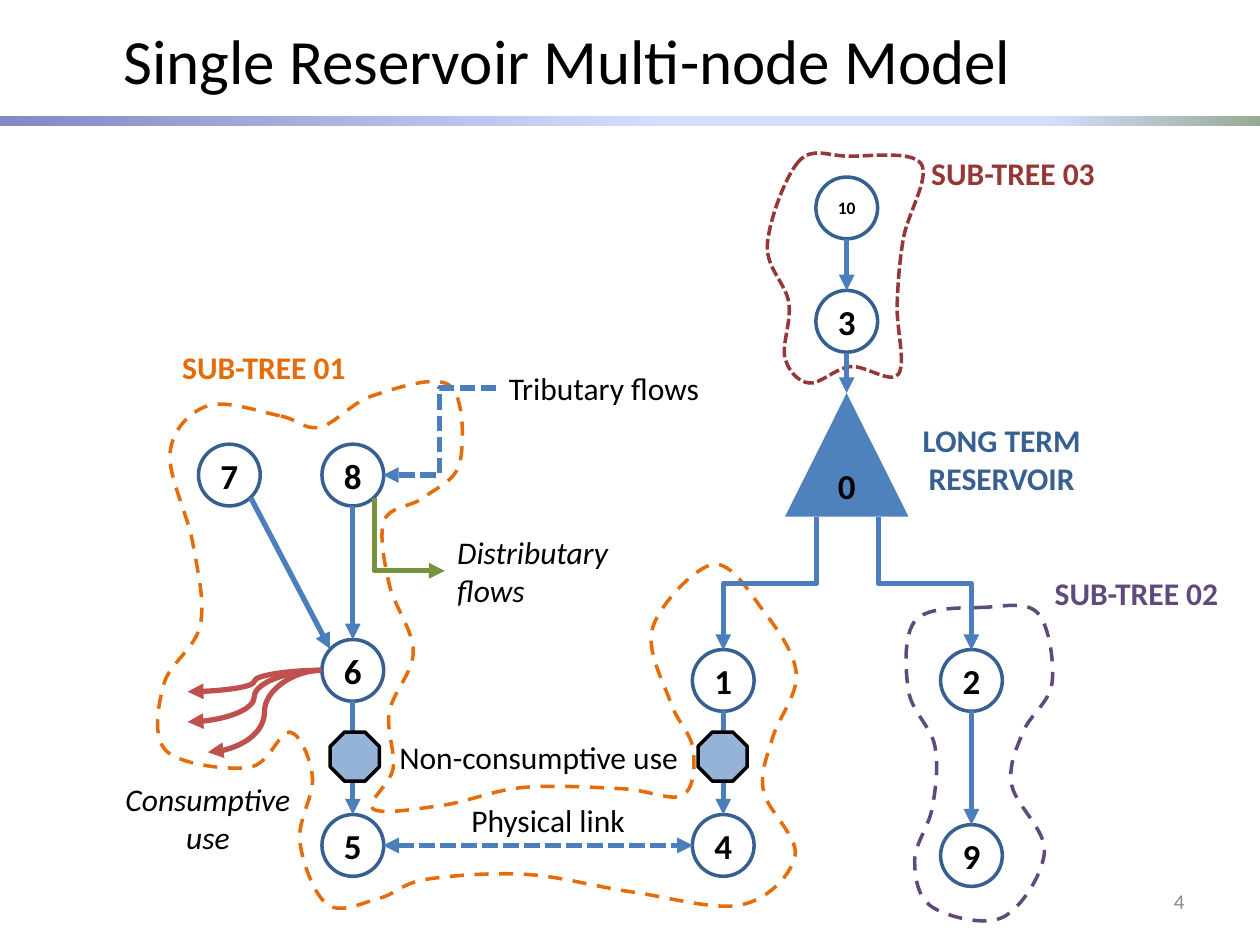
from copy import deepcopy
from dataclasses import dataclass

from lxml.etree import SubElement
from pptx import Presentation
from pptx.dml.color import RGBColor
from pptx.enum.dml import MSO_LINE
from pptx.enum.shapes import MSO_CONNECTOR, MSO_SHAPE
from pptx.enum.text import MSO_ANCHOR, PP_ALIGN
from pptx.oxml.ns import qn
from pptx.util import Inches, Pt


@dataclass(frozen=True)
class Theme:
    font: str = "Calibri"
    black: str = "000000"
    grey: str = "8C8C8C"
    blue: str = "4F81BD"
    link: str = "4B7EBC"
    navy: str = "376092"
    pale: str = "95B3D7"
    orange: str = "E46C0A"
    purple: str = "604A7B"
    maroon: str = "953735"
    green: str = "77933C"
    red: str = "C0504D"
    band: tuple = ((0, "8488C4"), (53, "D4DEFF"), (83, "D4DEFF"), (100, "96AB94"))
    title: int = 36
    node: int = 20
    label: int = 18
    number: int = 12
    small: int = 10
    outline: int = 2
    flow: int = 3


T = Theme()
D = 0.49      # node diameter
R = D / 2
OCT = 0.39    # octagon size

# Node centres
NODES = {
    "10": (6.72, 1.65), "3": (6.72, 2.55), "1": (5.74, 5.4), "4": (5.74, 6.71),
    "7": (1.82, 3.77), "8": (2.8, 3.77), "6": (2.8, 5.32), "5": (2.8, 6.71),
    "2": (7.71, 5.4), "9": (7.71, 6.79),
}

# Points that the sub-tree outlines pass through
TREE_1 = [
    (2.22, 3.3), (1.65, 3.22), (1.35, 3.59), (1.53, 4.31), (1.59, 4.96), (1.3, 5.43),
    (1.32, 5.96), (1.98, 6.09), (2.3, 5.81), (2.48, 6.17), (2.38, 6.68), (2.6, 7.18),
    (3.01, 7.13), (3.38, 6.98), (4.18, 6.94), (5.02, 7.08), (5.89, 7.18), (6.31, 6.79),
    (6.06, 6.28), (6.13, 5.86), (6.32, 5.35), (6.06, 4.85), (5.66, 4.48), (5.18, 4.98),
    (5.32, 5.57), (5.5, 5.94), (5.42, 6.31), (4.94, 6.26), (4.15, 6.25), (3.52, 6.39),
    (2.96, 6.42), (3.12, 6.1), (3.09, 5.65), (3.28, 5.17), (3.09, 4.64), (3.05, 4.13),
    (3.36, 3.95), (3.65, 3.67), (3.57, 3.06), (2.96, 3.14), (2.54, 3.39),
]
TREE_2 = [
    (7.82, 4.82), (7.27, 4.92), (7.21, 5.48), (7.42, 5.92), (7.4, 6.41), (7.26, 6.83),
    (7.4, 7.2), (7.96, 7.28), (8.29, 6.76), (8.03, 6.23), (8.12, 5.81), (8.35, 5.42),
    (8.24, 4.87),
]
TREE_3 = [
    (6.34, 1.28), (6.09, 1.94), (6.26, 2.4), (6.23, 2.84), (6.42, 3.04), (6.75, 2.91),
    (7.13, 2.97), (7.12, 2.42), (7.17, 1.89), (7.31, 1.3), (6.73, 1.24),
]


def rgb(color):
    return RGBColor.from_string(color)


def apply(obj, values):
    for name, value in values.items():
        setattr(obj, name, value)


def style_line(line, color, width, dash=None):
    line.color.rgb = rgb(color)
    apply(line, {"width": Pt(width), "dash_style": dash})


def write(s, text, size, color=T.black, align=PP_ALIGN.CENTER,
          anchor=MSO_ANCHOR.MIDDLE, **font):
    tf = s.text_frame
    apply(tf, {"word_wrap": True, "vertical_anchor": anchor})
    p = tf.paragraphs[0]
    p.alignment = align
    r = p.add_run()
    r.text = text
    apply(r.font, {"name": T.font, "size": Pt(size), **font})
    r.font.color.rgb = rgb(color)


def add_label(slide, box, text, size=T.label, anchor=MSO_ANCHOR.TOP, **style):
    s = slide.shapes.add_textbox(*map(Inches, box))
    write(s, text, size, anchor=anchor, **style)


def add_shape(slide, kind, box, fill=None, outline=None):
    s = slide.shapes.add_shape(kind, *map(Inches, box))
    s.shadow.inherit = False
    if fill:
        s.fill.solid()
        s.fill.fore_color.rgb = rgb(fill)
    else:
        s.fill.background()
    if outline:
        style_line(s.line, outline, T.outline)
    else:
        s.line.fill.background()
    return s


def add_node(slide, name, x, y):
    s = add_shape(slide, MSO_SHAPE.OVAL, (x - R, y - R, D, D), outline=T.navy)
    apply(s.text_frame, {f"margin_{side}": 0 for side in ("left", "right", "top", "bottom")})
    write(s, name, T.small if len(name) > 1 else T.node, bold=True)


def add_band(slide):
    s = add_shape(slide, MSO_SHAPE.RECTANGLE, (0, 0.92, 10, 0.08))
    s.fill.gradient()
    s.fill.gradient_angle = 0
    stops = s.element.find(".//" + qn("a:gsLst"))
    for stop in list(stops):
        stops.remove(stop)
    for pos, color in T.band:
        stop = SubElement(stops, qn("a:gs"), pos=str(pos * 1000))
        SubElement(stop, qn("a:srgbClr"), val=color)


def add_outline(slide, knots, color, dash):
    """Closed smooth curve through the knots (Catmull-Rom as Bezier segments)."""
    pts = [(Inches(x), Inches(y)) for x, y in knots]
    fb = slide.shapes.build_freeform(*pts[0])
    fb.add_line_segments(pts[1:] + pts[:1], close=True)
    s = fb.convert_to_shape()
    s.shadow.inherit = False
    s.fill.background()
    style_line(s.line, color, T.outline, dash)
    n = len(pts)
    for i, seg in enumerate(list(s.element.iter(qn("a:lnTo")))):
        before, start, end, after = (pts[(i + k) % n] for k in (-1, 0, 1, 2))
        controls = (
            [a + (c - b) / 6 for a, b, c in zip(start, before, end)],
            [a - (c - b) / 6 for a, b, c in zip(end, start, after)],
        )
        seg.tag = qn("a:cubicBezTo")
        for k, (x, y) in enumerate(controls):
            pt = deepcopy(seg[-1])
            pt.set("x", str(round(x - s.left)))
            pt.set("y", str(round(y - s.top)))
            seg.insert(k, pt)


def add_flow(slide, start, end, kind=MSO_CONNECTOR.STRAIGHT, color=T.link,
             dash=None, both=False):
    s = slide.shapes.add_connector(kind, *map(Inches, start + end))
    style_line(s.line, color, T.flow, dash)
    ln = s.line._get_or_add_ln()
    if both:
        SubElement(ln, qn("a:headEnd"), type="triangle")
    SubElement(ln, qn("a:tailEnd"), type="triangle")
    SubElement(s.element.spPr, qn("a:effectLst"))
    return s


def add_drop(slide, start, end, preset="bentConnector3", color=T.link):
    """Elbow that leaves its start downwards: a turned box around the same centre."""
    s = add_flow(slide, start, end, MSO_CONNECTOR.ELBOW, color)
    (x1, y1), (x2, y2) = start, end
    w, h = y2 - y1, abs(x2 - x1)
    apply(s, {"left": Inches((x1 + x2 - w) / 2), "top": Inches((y1 + y2 - h) / 2),
              "width": Inches(w), "height": Inches(h)})
    right = x2 > x1
    xfrm = s.element.spPr.find(qn("a:xfrm"))
    xfrm.set("rot", str((270 if right else 90) * 60000))
    xfrm.set("flipH", str(int(right)))
    s.element.spPr.find(qn("a:prstGeom")).set("prst", preset)


def main():
    prs = Presentation()
    apply(prs, {"slide_width": Inches(10), "slide_height": Inches(7.5)})
    slide = prs.slides.add_slide(prs.slide_layouts[6])

    # Heading
    add_label(slide, (0.88, 0.06, 8.87, 0.83), "Single Reservoir Multi-node Model",
              T.title, MSO_ANCHOR.MIDDLE, align=PP_ALIGN.LEFT)
    add_band(slide)

    # Sub-tree outlines
    add_outline(slide, TREE_3, T.maroon, MSO_LINE.SQUARE_DOT)
    add_outline(slide, TREE_2, T.purple, MSO_LINE.DASH)
    add_outline(slide, TREE_1, T.orange, MSO_LINE.DASH)

    # Reservoir and nodes
    s = add_shape(slide, MSO_SHAPE.ISOSCELES_TRIANGLE, (6.23, 3.12, 2 * D, 2 * D), T.blue)
    write(s, "0", T.node, bold=True)
    for name, (x, y) in NODES.items():
        add_node(slide, name, x, y)

    # Straight flows between nodes
    for upper, lower in (("10", "3"), ("8", "6"), ("6", "5"), ("1", "4"), ("2", "9")):
        (x, y1), (_, y2) = NODES[upper], NODES[lower]
        add_flow(slide, (x, y1 + R), (x, y2 - R))
    add_flow(slide, (6.72, 2.8), (6.72, 3.12))
    add_flow(slide, (1.99, 3.95), (2.62, 5.15))
    add_flow(slide, (3.04, 6.71), (5.5, 6.71), dash=MSO_LINE.SQUARE_DOT, both=True)

    # Bent and curved flows
    add_drop(slide, (6.48, 4.1), (5.74, 5.16))
    add_drop(slide, (6.97, 4.1), (7.71, 5.16))
    add_drop(slide, (2.97, 3.95), (3.53, 4.53), "bentConnector2", T.green)
    add_flow(slide, (3.94, 3.08), (3.04, 3.77), MSO_CONNECTOR.ELBOW, dash=MSO_LINE.SQUARE_DOT)
    for end in ((1.65, 5.97), (1.49, 5.73), (1.49, 5.49)):
        add_flow(slide, (2.55, 5.32), end, MSO_CONNECTOR.CURVE, T.red)

    # Non-consumptive uses
    for x in (2.62, 5.54):
        add_shape(slide, MSO_SHAPE.OCTAGON, (x, 5.81, OCT, OCT), T.pale, T.black)

    # Labels
    left = {"align": PP_ALIGN.LEFT}
    for box, text, style in (
        ((3.94, 2.88, 1.88, 0.39), "Tributary flows", left),
        ((3.53, 4.18, 1.72, 0.69), "Distributary flows", {**left, "italic": True}),
        ((0.83, 6.14, 1.64, 0.69), "Consumptive use", {"italic": True}),
        ((3.04, 5.81, 2.47, 0.39), "Non-consumptive use", {}),
        ((3.37, 6.31, 1.96, 0.39), "Physical link", {}),
        ((1.32, 2.71, 1.55, 0.39), "SUB-TREE 01", {"color": T.orange, "bold": True}),
        ((8.2, 4.51, 1.64, 0.39), "SUB-TREE 02", {"color": T.purple, "bold": True}),
        ((7.22, 1.17, 1.64, 0.39), "SUB-TREE 03", {"color": T.maroon, "bold": True}),
        ((7.13, 3.29, 1.64, 0.69), "LONG TERM RESERVOIR", {"color": T.navy, "bold": True}),
    ):
        add_label(slide, box, text, **style)

    # Slide number
    add_label(slide, (7.17, 6.95, 2.33, 0.4), "4", T.number, MSO_ANCHOR.MIDDLE,
              color=T.grey, align=PP_ALIGN.RIGHT)
    prs.save("out.pptx")


if __name__ == "__main__":
    main()
